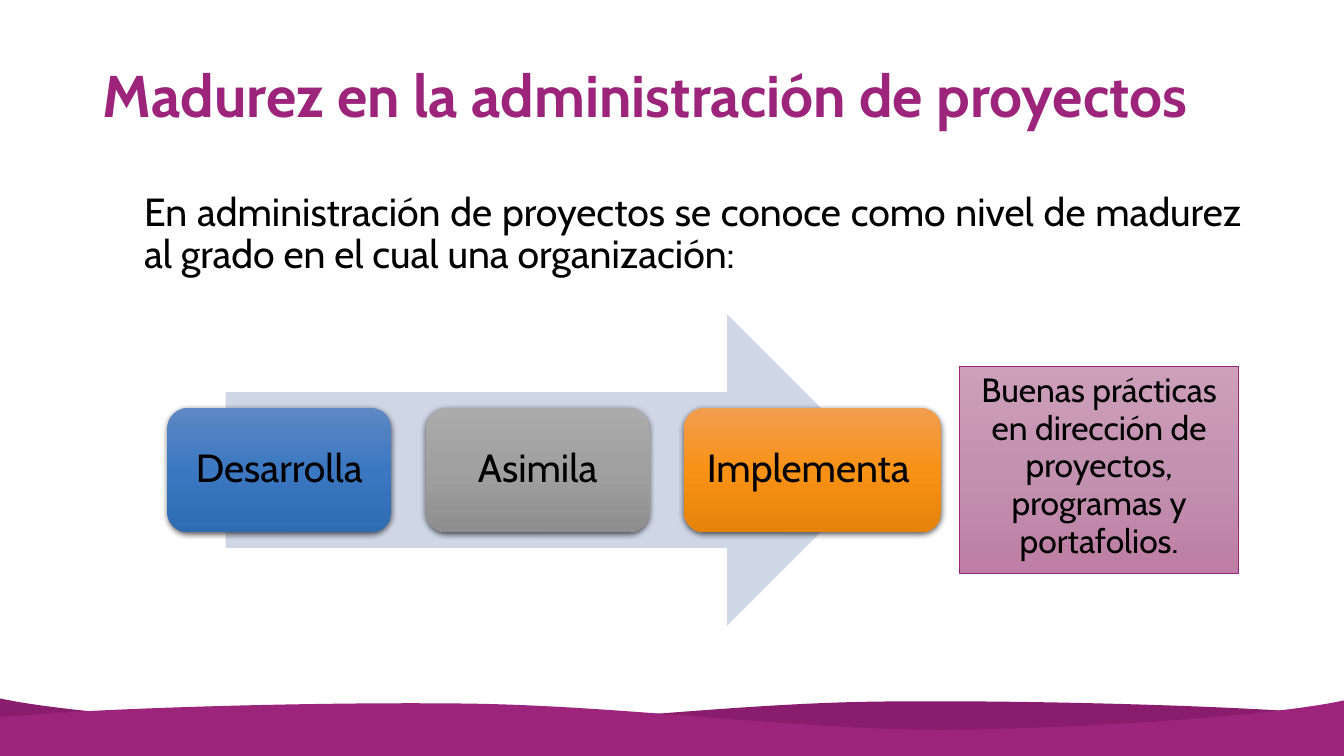
import copy

import pptx
import pptx.dml.color
import pptx.enum.shapes
import pptx.enum.text
import pptx.oxml
import pptx.oxml.ns
import pptx.util

Cm = pptx.util.Cm
Pt = pptx.util.Pt
SHAPES = pptx.enum.shapes.MSO_SHAPE
ALIGN = pptx.enum.text.PP_ALIGN
ANCHOR = pptx.enum.text.MSO_ANCHOR

WIDTH, HEIGHT = 33.87, 19.05
COLORS = {"plum": "9C247B", "dark_plum": "891C6C", "arrow": "CFD7E7", "text": "000000"}
GRADIENTS = {
    "practices": ("CE9FBB", "C392B0", "BE7EA5"),
    "blue": ("5E88C4", "3B78C1", "2F6BB1"),
    "gray": ("ACABAB", "A1A0A0", "8F8E8E"),
    "orange": ("F29D50", "F89216", "E5830B"),
}
STAGES = [("Desarrolla", "blue", 5.64), ("Asimila", "gray", 5.64), ("Implementa ", "orange", 6.48)]
WAVE = [
    (33.87, 18.03),
    (31.9, 17.81), (26.06, 17.63), (22.1, 17.68),
    (18.16, 17.73), (13.79, 18.34), (10.11, 18.34),
    (6.43, 18.31), (1.73, 17.98), (0, 17.6),
]


def rgb(name):
    return pptx.dml.color.RGBColor.from_string(COLORS[name])


def write(holder, words, size, align=ALIGN.LEFT, anchor=ANCHOR.TOP, bold=False, color="text", spacing=0.9):
    frame = holder.text_frame
    frame.word_wrap = True
    frame.vertical_anchor = anchor
    paragraph = frame.paragraphs[0]
    paragraph.alignment = align
    paragraph.line_spacing = spacing
    run = paragraph.add_run()
    run.text = words
    run.font.name = "Cabin"
    run.font.size = Pt(size)
    run.font.bold = bold
    run.font.color.rgb = rgb(color)


def add_box(slide, kind, box):
    shape = slide.shapes.add_shape(kind, *map(Cm, box))
    shape.shadow.inherit = False
    shape.line.fill.background()
    return shape


def fill_gradient(shape, name):
    shape.fill.gradient()
    shape.fill.gradient_angle = 270
    first = shape.fill.gradient_stops[0]._gs
    first.addnext(copy.deepcopy(first))
    for stop, position, color in zip(shape.fill.gradient_stops, (0, 0.5, 1), GRADIENTS[name]):
        stop.position = position
        stop.color.rgb = pptx.dml.color.RGBColor.from_string(color)


def cast_shadow(shape):
    effects = shape._element.spPr.find(pptx.oxml.ns.qn("a:effectLst"))
    effects.append(pptx.oxml.parse_xml(
        f'<a:outerShdw {pptx.oxml.ns.nsdecls("a")} blurRad="{Pt(4.5)}" dist="{Pt(1.5)}" '
        'dir="5400000" algn="ctr" rotWithShape="0"><a:srgbClr val="000000">'
        '<a:alpha val="63000"/></a:srgbClr></a:outerShdw>'))


def bend_segments(shape, count):
    segments = shape._element.xpath(".//a:lnTo")[:count]
    for first, second, end in zip(segments[::3], segments[1::3], segments[2::3]):
        curve = pptx.oxml.parse_xml(f'<a:cubicBezTo {pptx.oxml.ns.nsdecls("a")}/>')
        first.addprevious(curve)
        for segment in (first, second, end):
            curve.append(segment[0])
            segment.getparent().remove(segment)


def add_wave(slide, crest, color):
    outline = crest + [(crest[-1][0], HEIGHT), (crest[0][0], HEIGHT)]
    corners = [(Cm(x), Cm(y)) for x, y in outline]
    builder = slide.shapes.build_freeform(*corners[0])
    builder.add_line_segments(corners[1:], close=True)
    wave = builder.convert_to_shape()
    bend_segments(wave, len(crest) - 1)
    wave.shadow.inherit = False
    wave.fill.solid()
    wave.fill.fore_color.rgb = rgb(color)
    wave.line.fill.background()


def add_footer(slide):
    add_wave(slide, WAVE, "dark_plum")
    add_wave(slide, [(WIDTH - x, y + 0.05) for x, y in WAVE], "plum")


def add_heading(slide, box):
    heading = slide.shapes.add_textbox(*map(Cm, box))
    write(heading, "Madurez en la administración de proyectos", 42,
          anchor=ANCHOR.MIDDLE, bold=True, color="plum")


def add_definition(slide, box):
    definition = slide.shapes.add_textbox(*map(Cm, box))
    write(definition, "En administración de proyectos se conoce como nivel de madurez "
          "al grado en el cual una organización:", 28, align=ALIGN.JUSTIFY)


def add_practices(slide, box):
    practices = add_box(slide, SHAPES.RECTANGLE, box)
    fill_gradient(practices, "practices")
    practices.line.color.rgb = rgb("plum")
    practices.line.width = Pt(0.5)
    write(practices, "Buenas prácticas en dirección de proyectos, programas y portafolios.",
          24, align=ALIGN.CENTER, spacing=Pt(27))


def add_process(slide, box):
    left, top, width, height = box
    arrow = add_box(slide, SHAPES.RIGHT_ARROW, (left + 1.47, top, 16.56, height))
    arrow.fill.solid()
    arrow.fill.fore_color.rgb = rgb("arrow")
    stage_height = height * 0.4
    gap = (width - sum(stage[2] for stage in STAGES)) / (len(STAGES) - 1)
    for words, gradient, stage_width in STAGES:
        stage = add_box(slide, SHAPES.ROUNDED_RECTANGLE,
                        (left, top + (height - stage_height) / 2, stage_width, stage_height))
        fill_gradient(stage, gradient)
        cast_shadow(stage)
        frame = stage.text_frame
        frame.margin_left = frame.margin_right = Cm(0.3)
        frame.margin_top = frame.margin_bottom = Cm(0.3)
        write(stage, words, 28, align=ALIGN.CENTER, anchor=ANCHOR.MIDDLE)
        left += stage_width + gap


def main():
    deck = pptx.Presentation()
    deck.slide_width, deck.slide_height = Cm(WIDTH), Cm(HEIGHT)
    slide = deck.slides.add_slide(deck.slide_layouts[6])
    add_footer(slide)
    add_heading(slide, (2.34, 0.64, 29.21, 3.68))
    add_definition(slide, (3.38, 4.72, 28.15, 3.2))
    add_practices(slide, (24.18, 9.23, 7.04, 5.22))
    add_process(slide, (4.22, 7.92, 19.5, 7.85))
    deck.save("out.pptx")


if __name__ == "__main__":
    main()
